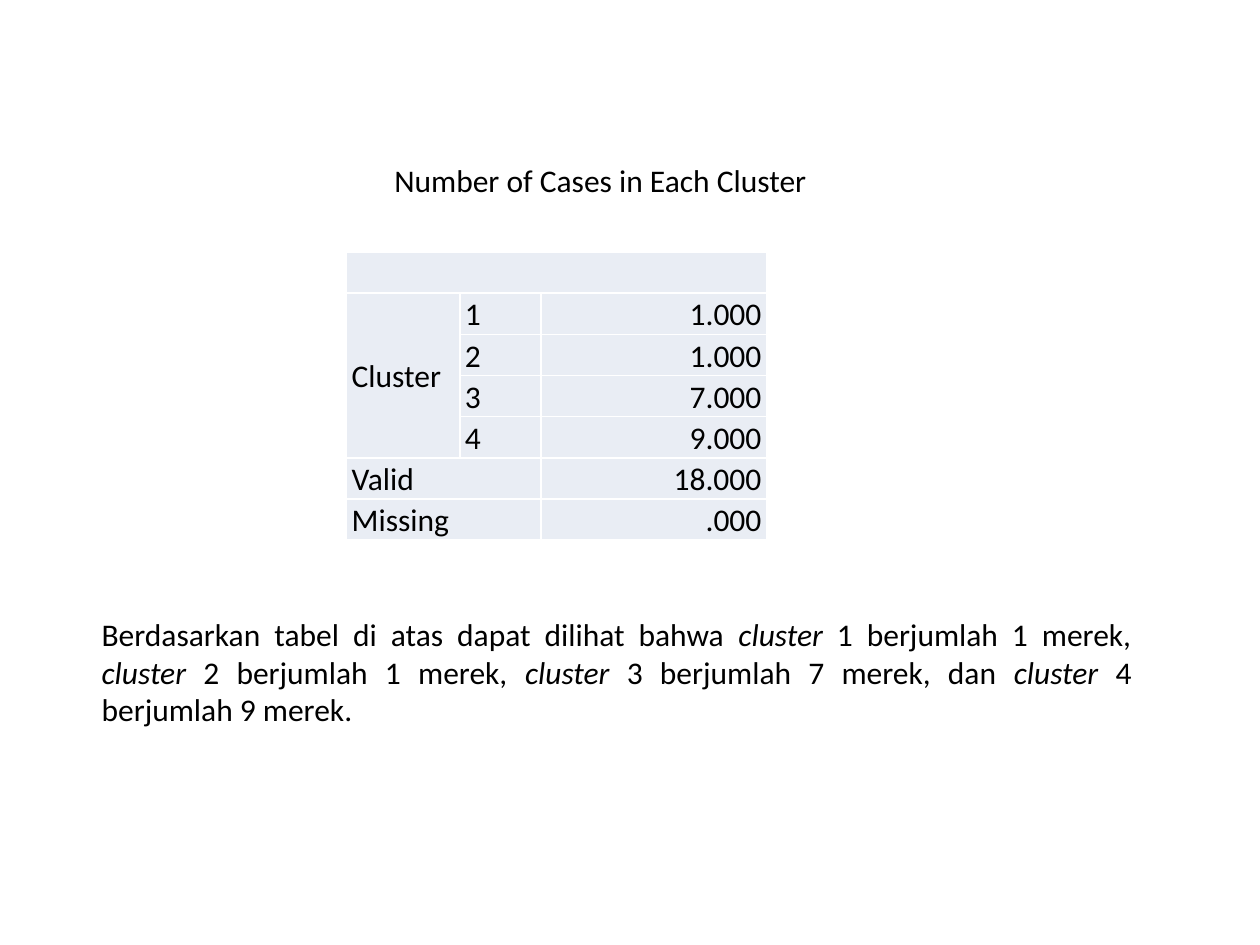
from lxml import etree
from pptx import Presentation, util as u
from pptx.dml.color import RGBColor
from pptx.enum import text as t
from pptx.oxml.ns import qn

# Content
TITLE = "Number of Cases in Each Cluster"
ROWS = [
    ("", "", ""),
    ("Cluster", "1", "1.000"),
    ("", "2", "1.000"),
    ("", "3", "7.000"),
    ("", "4", "9.000"),
    ("Valid", "", "18.000"),
    ("Missing", "", ".000"),
]
SPANS = [((0, 0), (0, 2)), ((1, 0), (4, 0)), ((5, 0), (5, 1)), ((6, 0), (6, 1))]
WIDTHS = (2.28, 1.64, 4.54)
ROW_H = 0.83
NOTE = [  # text, italic
    ("Berdasarkan tabel di atas dapat dilihat bahwa ", False),
    ("cluster", True), (" 1 berjumlah 1 merek, ", False),
    ("cluster", True), (" 2 berjumlah 1 merek, ", False),
    ("cluster", True), (" 3 berjumlah 7 merek, dan ", False),
    ("cluster", True), (" 4 berjumlah 9 merek.", False),
]
INK, FILL, EDGE = "000000", "E9EDF4", "FFFFFF"


def color(code):
    return RGBColor.from_string(code)


def style(para, align):
    para.alignment = align
    para.font.name = "Calibri"
    para.font.size = u.Pt(18)
    para.font.color.rgb = color(INK)


def add_box(slide, left, top, width, height, anchor, align, runs):
    frame = slide.shapes.add_textbox(
        *map(u.Cm, (left, top, width, height))).text_frame
    frame.word_wrap = True
    frame.vertical_anchor = anchor
    para = frame.paragraphs[0]
    style(para, align)
    for words, slant in runs:
        run = para.add_run()
        run.text = words
        if slant:
            run.font.italic = True


def add_edges(cell):
    props = cell._tc.get_or_add_tcPr()
    for side in ("a:lnL", "a:lnR", "a:lnT", "a:lnB"):
        line = etree.SubElement(props, qn(side), w=str(u.Pt(1)))
        fill = etree.SubElement(line, qn("a:solidFill"))
        etree.SubElement(fill, qn("a:srgbClr"), val=EDGE)


deck = Presentation()
deck.slide_width, deck.slide_height = u.Cm(25.4), u.Cm(19.05)
slide = deck.slides.add_slide(deck.slide_layouts[6])

# Title
add_box(slide, 5.02, 2.74, 14.17, 1.78, t.MSO_ANCHOR.MIDDLE,
        t.PP_ALIGN.CENTER, [(TITLE, False)])

# Table of cases
table = slide.shapes.add_table(
    len(ROWS), len(WIDTHS), u.Cm(6.99), u.Cm(5.08),
    u.Cm(sum(WIDTHS)), u.Cm(ROW_H * len(ROWS))).table
table.first_row = table.horz_banding = False
for col, width in zip(table.columns, WIDTHS):
    col.width = u.Cm(width)
for r, row in enumerate(ROWS):
    table.rows[r].height = u.Cm(ROW_H)
    for c, words in enumerate(row):
        cell = table.cell(r, c)
        add_edges(cell)
        cell.fill.solid()
        cell.fill.fore_color.rgb = color(FILL)
        cell.margin_top = cell.margin_bottom = 0
        cell.margin_left = cell.margin_right = u.Cm(0.1)
        cell.vertical_anchor = t.MSO_ANCHOR.MIDDLE
        para = cell.text_frame.paragraphs[0]
        para.text = words
        para.line_spacing = 1.07
        style(para, t.PP_ALIGN.RIGHT if c == 2 else t.PP_ALIGN.LEFT)
for first, last in SPANS:
    table.cell(*first).merge(table.cell(*last))

# Note below the table
add_box(slide, 1.8, 12.27, 21.26, 2.57, t.MSO_ANCHOR.TOP,
        t.PP_ALIGN.JUSTIFY, NOTE)

deck.save("out.pptx")
